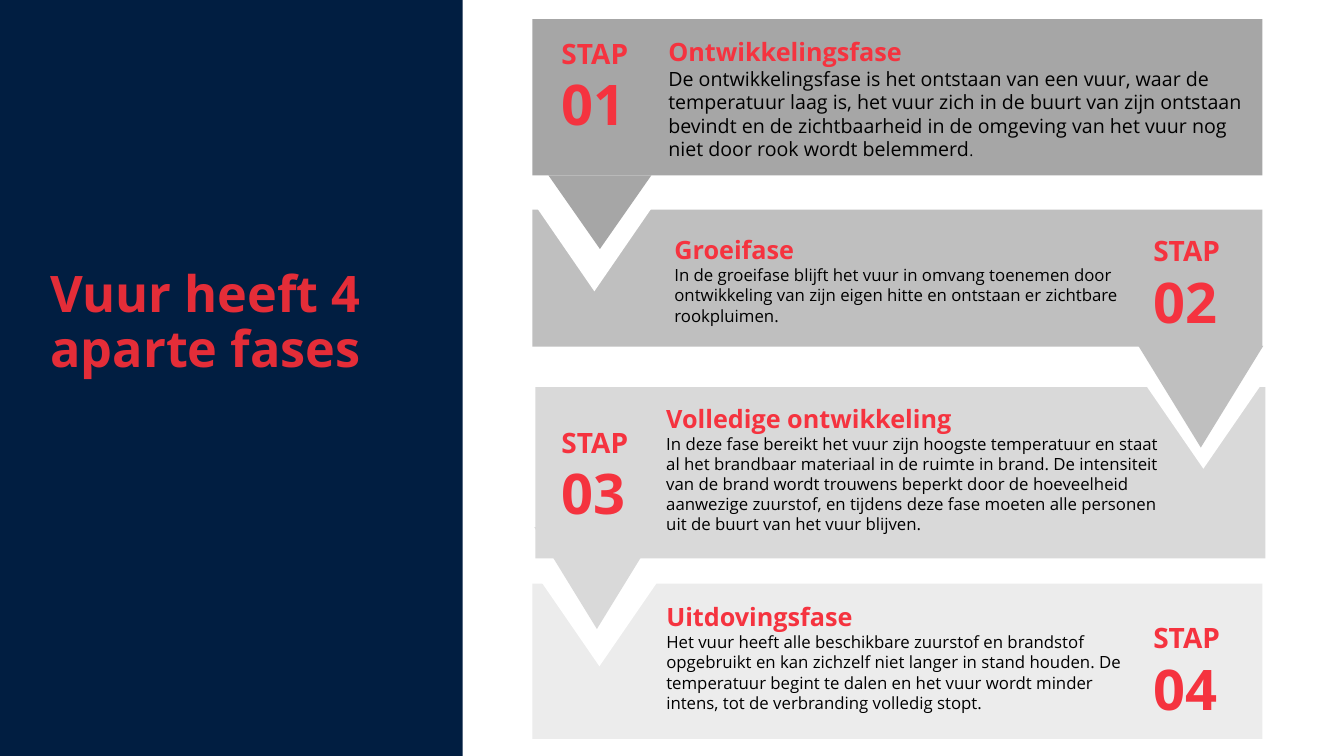
from pptx import Presentation
from pptx import util as u
from pptx.dml import color
from pptx.enum import shapes, text

PX = 9144
FONT = "Open Sans"
NAVY, TITLE_RED, RED = "011E41", "E42D38", "F5333F"
BLACK, WHITE = "000000", "FFFFFF"
STEP_W, STEP_H = 118, 111

PHASES = [
    dict(box=(528, 19, 724, 155), fill="A6A6A6", step=(19, 12),
         body=(125, 12, 590, 135), size=14, end=(".", 11),
         title="Ontwikkelingsfase",
         words="De ontwikkelingsfase is het ontstaan van een vuur, waar de "
               "temperatuur laag is, het vuur zich in de buurt van zijn ontstaan "
               "bevindt en de zichtbaarheid in de omgeving van het vuur nog "
               "niet door rook wordt belemmerd"),
    dict(box=(528, 208, 724, 136), fill="BFBFBF", step=(606, 19),
         body=(131, 20, 475, 101), size=12, title="Groeifase",
         words="In de groeifase blijft het vuur in omvang toenemen door "
               "ontwikkeling van zijn eigen hitte en ontstaan er zichtbare "
               "rookpluimen."),
    dict(box=(531, 384, 724, 170), fill="D9D9D9", step=(16, 33),
         body=(120, 11, 514, 141), size=12, title="Volledige ontwikkeling",
         words="In deze fase bereikt het vuur zijn hoogste temperatuur en staat "
               "al het brandbaar materiaal in de ruimte in brand. De intensiteit "
               "van de brand wordt trouwens beperkt door de hoeveelheid "
               "aanwezige zuurstof, en tijdens deze fase moeten alle personen "
               "uit de buurt van het vuur blijven."),
    dict(box=(528, 579, 724, 154), fill="ECECEC", step=(606, 32),
         body=(123, 13, 489, 121), size=12, title="Uitdovingsfase",
         words="Het vuur heeft alle beschikbare zuurstof en brandstof "
               "opgebruikt en kan zichzelf niet langer in stand houden. De "
               "temperatuur begint te dalen en het vuur wordt minder "
               "intens, tot de verbranding volledig stopt."),
]

ARROWS = [
    ((531, 204), (544, 174, 102, 73)),
    ((1135, 380), (1129, 343, 124, 101)),
    ((536, 576), (530, 523, 124, 101)),
]


def paint(target, value):
    target.rgb = color.RGBColor.from_string(value)


def place(*box):
    return [u.Emu(length * PX) for length in box]


def add_block(page, kind, box, fill):
    block = page.shapes.add_shape(kind, *place(*box))
    block.shadow.inherit = False
    block.fill.solid()
    paint(block.fill.fore_color, fill)
    block.line.fill.background()
    return block


def add_span(para, words, size, tint, bold):
    span = para.add_run()
    span.text = words
    span.font.name = FONT
    span.font.size = u.Pt(size)
    span.font.bold = bold
    paint(span.font.color, tint)


def add_frame(page, box):
    frame = page.shapes.add_textbox(*place(*box)).text_frame
    frame.word_wrap = True
    frame.auto_size = text.MSO_AUTO_SIZE.SHAPE_TO_FIT_TEXT
    return frame


def add_title_panel(page, box):
    left, top, width, height = box
    add_block(page, shapes.MSO_SHAPE.RECTANGLE, box, NAVY)
    title = page.shapes.title
    title.left, title.top, title.width, title.height = place(
        left + 42, top + 76, width - 70, height - 259)
    page.shapes._spTree.append(title._element)
    frame = title.text_frame
    frame.word_wrap = True
    frame.auto_size = text.MSO_AUTO_SIZE.NONE
    frame.vertical_anchor = text.MSO_ANCHOR.MIDDLE
    para = frame.paragraphs[0]
    para.alignment = text.PP_ALIGN.LEFT
    para.line_spacing = 0.9
    add_span(para, "Vuur heeft 4 aparte fases", 36, TITLE_RED, True)


def add_phase(page, number, phase):
    left, top = phase["box"][:2]
    add_block(page, shapes.MSO_SHAPE.RECTANGLE, phase["box"], phase["fill"])

    dx, dy = phase["step"]
    step = add_frame(page, (left + dx, top + dy, STEP_W, STEP_H)).paragraphs[0]
    add_span(step, "STAP ", 20, RED, True)
    add_span(step, f"{number:02d}", 40, RED, True)

    dx, dy, width, height = phase["body"]
    body = add_frame(page, (left + dx, top + dy, width, height))
    add_span(body.paragraphs[0], phase["title"], 18, RED, True)
    para = body.add_paragraph()
    add_span(para, phase["words"], phase["size"], BLACK, False)
    if "end" in phase:
        add_span(para, *phase["end"], BLACK, False)


def add_arrow(page, notch, box, fill):
    for area, tint in (((*notch, 117, 85), WHITE), (box, fill)):
        triangle = add_block(page, shapes.MSO_SHAPE.ISOSCELES_TRIANGLE, area, tint)
        triangle.rotation = 180


def main():
    deck = Presentation()
    deck.slide_width, deck.slide_height = place(1333, 750)
    page = deck.slides.add_slide(deck.slide_layouts[5])
    add_title_panel(page, (-2, -1, 461, 751))
    for number, phase in enumerate(PHASES, 1):
        add_phase(page, number, phase)
    for (notch, box), phase in zip(ARROWS, PHASES):
        add_arrow(page, notch, box, phase["fill"])
    deck.save("out.pptx")


if __name__ == "__main__":
    main()
